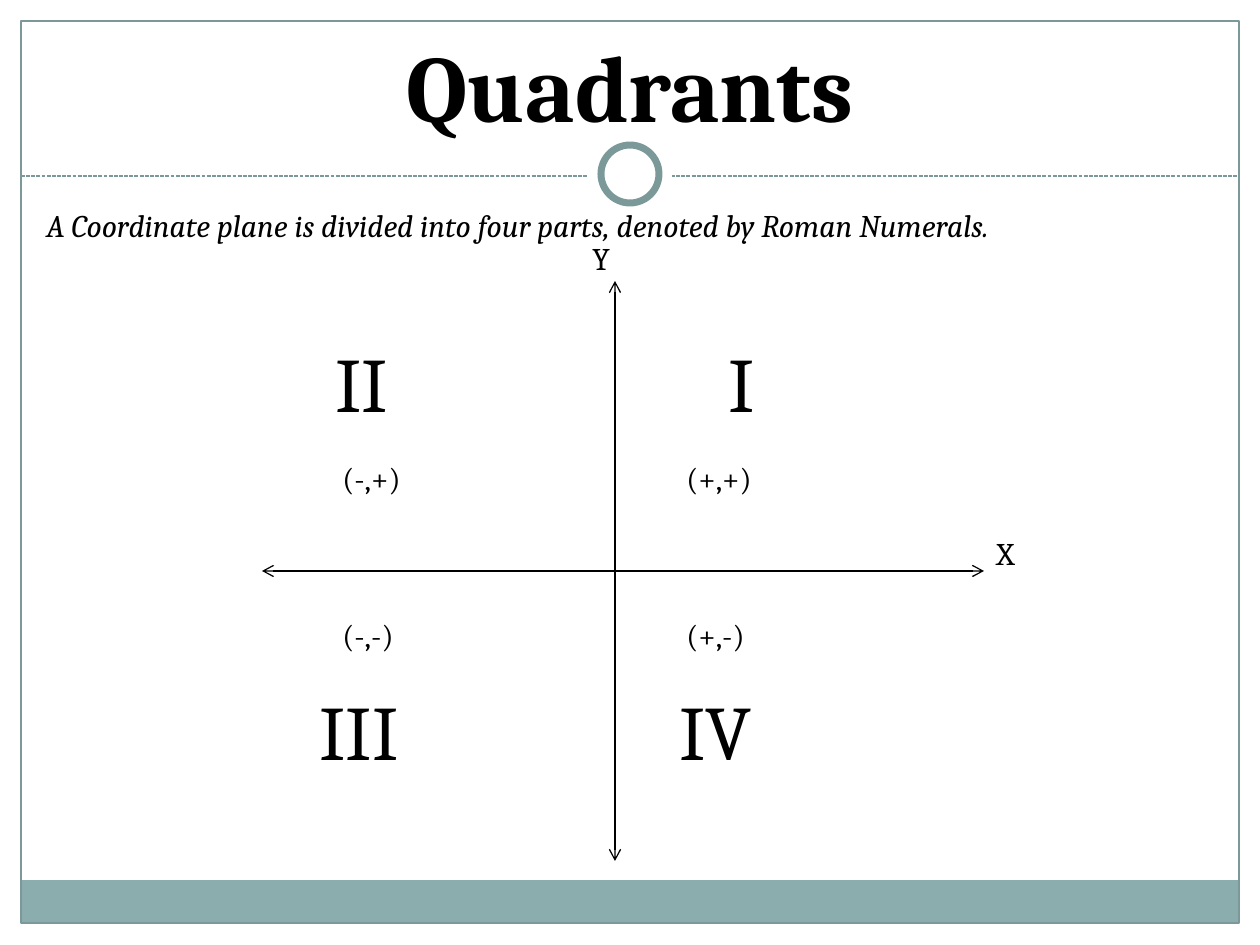
from pptx import Presentation
from pptx.dml.color import RGBColor
from pptx.enum.dml import MSO_LINE
from pptx.enum.shapes import MSO_CONNECTOR, MSO_SHAPE
from pptx.enum.text import MSO_ANCHOR, MSO_AUTO_SIZE, PP_ALIGN
from pptx.oxml.ns import qn
from pptx.util import Emu, Pt
from lxml.etree import SubElement

PX_PER_INCH = 126
FONT = "Cambria"
BLACK, WHITE, TEAL, BAND = "000000", "FFFFFF", "7C999A", "8CADAE"


def px(n):
    return Emu(round(n * 914400 / PX_PER_INCH))


def color(value):
    return RGBColor.from_string(value)


def add_run(tf, text, size, align=PP_ALIGN.LEFT, bold=False, italic=False):
    p = tf.paragraphs[0]
    p.alignment = align
    r = p.add_run()
    r.text = text
    r.font.name, r.font.size = FONT, Pt(size)
    r.font.bold, r.font.italic = bold, italic
    r.font.color.rgb = color(BLACK)


def add_label(s, box, text, size, **style):
    tf = s.shapes.add_textbox(*map(px, box)).text_frame
    tf.word_wrap = True
    add_run(tf, text, size, **style)


def add_preset(s, kind, box, fill=None, line=None, width=0.75):
    sp = s.shapes.add_shape(kind, *map(px, box))
    sp.shadow.inherit = False
    if fill:
        sp.fill.solid()
        sp.fill.fore_color.rgb = color(fill)
    else:
        sp.fill.background()
    if line:
        sp.line.color.rgb = color(line)
        sp.line.width = Pt(width)
    else:
        sp.line.fill.background()


def add_line(s, x1, y1, x2, y2, line, dash=None, arrows=False):
    cx = s.shapes.add_connector(MSO_CONNECTOR.STRAIGHT, px(x1), px(y1), px(x2), px(y2))
    cx.line.color.rgb = color(line)
    cx.line.width = Pt(0.75)
    if dash:
        cx.line.dash_style = dash
    if arrows:
        ln = cx.line._get_or_add_ln()
        for end in ("a:headEnd", "a:tailEnd"):
            SubElement(ln, qn(end), type="arrow")
    SubElement(cx._element.spPr, qn("a:effectLst"))


def add_frame(s, x, y, w, h):
    # Bottom band and border
    add_preset(s, MSO_SHAPE.RECTANGLE, (x, y + h - 43, w, 43), fill=BAND)
    add_preset(s, MSO_SHAPE.RECTANGLE, (x, y, w, h), line=TEAL)
    # Dashed divider, broken by a ring
    mid_x, rule_y, ring_y = x + w / 2, y + 155, y + 153
    add_line(s, x, rule_y, x + w, rule_y, TEAL, dash=MSO_LINE.SQUARE_DOT)
    for radius, line in ((42, None), (29, TEAL)):
        box = (mid_x - radius, ring_y - radius, 2 * radius, 2 * radius)
        add_preset(s, MSO_SHAPE.OVAL, box, fill=WHITE, line=line, width=4)


def add_heading(s, x, y, w, h):
    title = s.shapes.title
    title.left, title.top, title.width, title.height = map(px, (x, y, w, h))
    tf = title.text_frame
    tf.auto_size = MSO_AUTO_SIZE.NONE
    tf.vertical_anchor = MSO_ANCHOR.BOTTOM
    add_run(tf, "Quadrants", 54, align=PP_ALIGN.CENTER, bold=True)


def add_plane(s, x, y, w, h):
    # Axes and their names
    axis_x, axis_y = x + 353, y + h / 2
    add_line(s, axis_x, y, axis_x, y + h, BLACK, arrows=True)
    add_line(s, x, axis_y, x + w, axis_y, BLACK, arrows=True)
    add_label(s, (x + w, axis_y - 43, 71, 71), "X", 18)
    add_label(s, (axis_x - 35, y - 48, 71, 73), "Y", 18)

    # Quadrants: numeral, its left, width and alignment, then the signs
    left, right = x + 61, x + 405
    upper, lower = (y + 48, y + 172), (y + 396, y + 329)
    quadrants = [
        ("I", x + 420, 120, PP_ALIGN.CENTER, " (+,+)", right, upper),
        ("II", left, 165, PP_ALIGN.LEFT, " (-,+)", left, upper),
        ("III", x + 45, 224, PP_ALIGN.LEFT, " (-,-)", left, lower),
        ("IV", right, 194, PP_ALIGN.LEFT, " (+,-)", right, lower),
    ]
    for numeral, num_x, num_w, align, signs, signs_x, (num_y, signs_y) in quadrants:
        add_label(s, (num_x, num_y, num_w, 113), numeral, 44, align=align)
        add_label(s, (signs_x, signs_y, 209, 54), signs, 18)


def main():
    prs = Presentation()
    prs.slide_width, prs.slide_height = px(1260), px(945)
    s = prs.slides.add_slide(prs.slide_layouts[5])  # Title Only
    add_frame(s, 21, 21, 1218, 902)
    add_heading(s, 42, 43, 1176, 105)
    add_label(
        s, (34, 200, 1134, 50),
        "A Coordinate plane is divided into four parts, denoted by Roman Numerals.",
        18, italic=True,
    )
    add_plane(s, 262, 281, 722, 580)
    prs.save("out.pptx")


if __name__ == "__main__":
    main()
